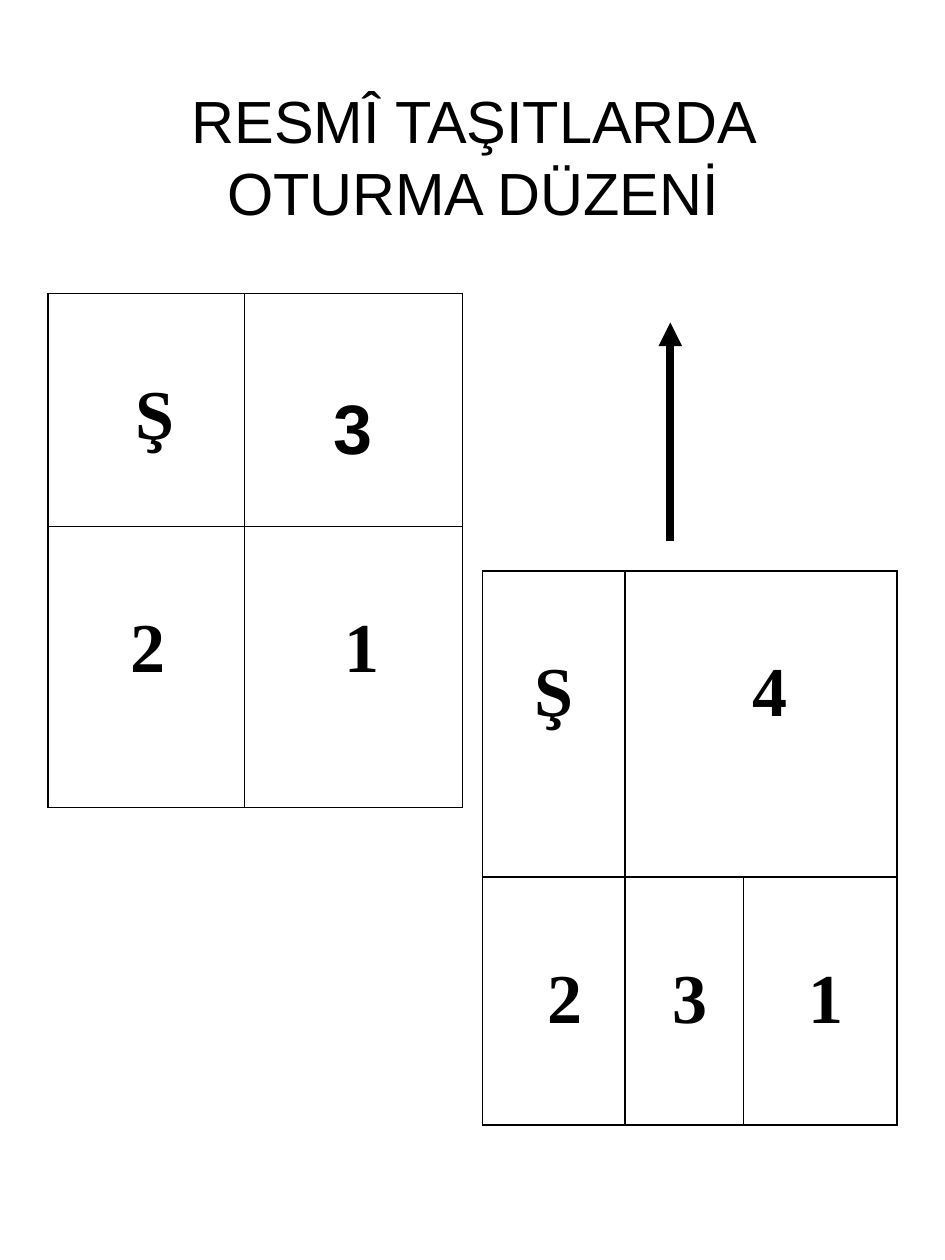
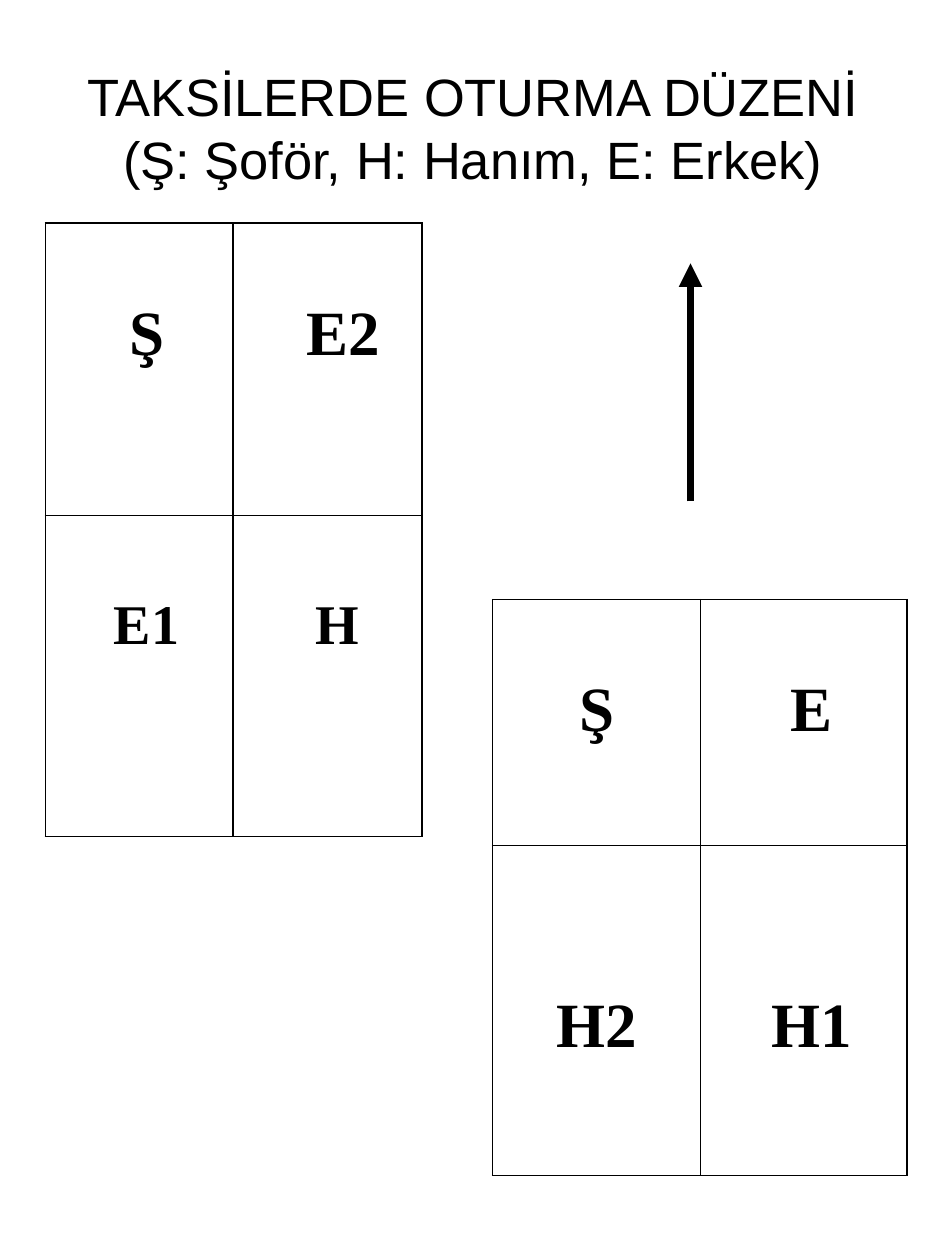
import pptx
import pptx.util
import pptx.dml.color
import pptx.enum.shapes
import pptx.enum.text
import pptx.oxml
import pptx.oxml.ns
from dataclasses import dataclass

Inches, Pt = pptx.util.Inches, pptx.util.Pt
ALIGN = pptx.enum.text.PP_ALIGN
BLACK = pptx.dml.color.RGBColor(0, 0, 0)
WHITE = pptx.dml.color.RGBColor(255, 255, 255)
SANS, SERIF = "Arial", "Times New Roman"
INSET_X, INSET_Y = 0.1, 0.05
LINE_HEIGHT, SPACE_WIDTH = 1.107, 0.25  # in ems
A_NS = pptx.oxml.ns.nsdecls("a")


@dataclass
class Seat:
    text: str
    size: int = 40
    indent: int = 0         # in space widths
    centred: bool = True
    lines_above: int = 1
    gap: float = 0          # extra inches above
    font: str = SERIF


def add_run(p, text, size, font, bold=False):
    r = p.add_run()
    r.text = text
    r.font.size = Pt(size)
    r.font.name = font
    r.font.bold = bold
    r.font.color.rgb = BLACK


def add_slide(prs):
    s = prs.slides.add_slide(prs.slide_layouts[6])
    s.background.fill.solid()
    s.background.fill.fore_color.rgb = WHITE
    return s


def add_title(s, lines, size, bottom=INSET_Y):
    sp = s.shapes.add_textbox(Inches(0.38), Inches(0.4), Inches(6.75), Inches(1.67))
    tf = sp.text_frame
    tf.word_wrap = True
    tf.vertical_anchor = pptx.enum.text.MSO_ANCHOR.MIDDLE
    tf.margin_bottom = Inches(bottom)
    p = tf.paragraphs[0]
    p.alignment = ALIGN.CENTER
    for i, line in enumerate(lines):
        if i:
            p.add_line_break()
        add_run(p, line, size, SANS)


def style_cell(cell):
    cell.fill.background()
    tc_pr = cell._tc.get_or_add_tcPr()
    for i, side in enumerate("LRTB"):
        tc_pr.insert(i, pptx.oxml.parse_xml(
            f'<a:ln{side} {A_NS} w="12700"><a:solidFill><a:srgbClr val="{BLACK}"/>'
            f'</a:solidFill></a:ln{side}>'))


def fill_seat(cell, seat):
    em = seat.size / 72
    cell.margin_left = Inches(INSET_X + seat.indent * SPACE_WIDTH * em)
    cell.margin_right = Inches(INSET_X)
    cell.margin_top = Inches(INSET_Y + seat.lines_above * LINE_HEIGHT * em + seat.gap)
    cell.margin_bottom = Inches(INSET_Y)
    p = cell.text_frame.paragraphs[0]
    p.alignment = ALIGN.CENTER if seat.centred else ALIGN.LEFT
    add_run(p, seat.text, seat.size, seat.font, bold=True)


def add_car(s, left, top, cols, rows, seats):
    """Draw a seating plan; None widens the seat on its left."""
    table = s.shapes.add_table(len(rows), len(cols), Inches(left), Inches(top),
                               Inches(sum(cols)), Inches(sum(rows))).table
    table.first_row = table.horz_banding = False
    for col, width in zip(table.columns, cols):
        col.width = Inches(width)
    for row, height in zip(table.rows, rows):
        row.height = Inches(height)
    for i, seat_row in enumerate(seats):
        for j, seat in enumerate(seat_row):
            cell = table.cell(i, j)
            style_cell(cell)
            if seat is None:
                table.cell(i, j - 1).merge(cell)
            else:
                fill_seat(cell, seat)


def add_direction_arrow(s, x, bottom, top):
    line = s.shapes.add_connector(pptx.enum.shapes.MSO_CONNECTOR.STRAIGHT,
                                  Inches(x), Inches(bottom), Inches(x), Inches(top))
    line.line.color.rgb = BLACK
    line.line.width = Pt(4.5)
    line.line._get_or_add_ln().append(
        pptx.oxml.parse_xml(f'<a:tailEnd {A_NS} type="triangle"/>'))
    line._element.spPr.append(pptx.oxml.parse_xml(f'<a:effectLst {A_NS}/>'))


def main():
    prs = pptx.Presentation()
    prs.slide_width, prs.slide_height = Inches(7.5), Inches(10)

    # Official vehicles
    s = add_slide(prs)
    add_title(s, ["RESMÎ TAŞITLARDA OTURMA DÜZENİ"], 34)
    add_car(s, 0.38, 2.33, [1.56, 1.73], [1.85, 2.23], [
        [Seat("Ş", indent=1), Seat("3", gap=0.11, font=SANS)],
        [Seat("2", indent=4, centred=False), Seat("1", indent=5, centred=False)]])
    add_car(s, 3.83, 4.53, [1.13, 0.94, 1.22], [2.43, 1.97], [
        [Seat("Ş"), Seat("4", indent=1), None],
        [Seat("2", indent=3, centred=False), Seat("3", indent=2, centred=False),
         Seat("1", indent=3, centred=False)]])
    add_direction_arrow(s, 5.32, 4.29, 2.56)

    # Taxis
    s = add_slide(prs)
    add_title(s, ["TAKSİLERDE OTURMA DÜZENİ", "(Ş: Şoför, H: Hanım, E: Erkek)"], 30,
              bottom=0.51)
    add_car(s, 0.36, 1.77, [1.49, 1.5], [2.32, 2.55], [
        [Seat("Ş", 36, indent=1), Seat("E2", 36, indent=2)],
        [Seat("E1", 32, indent=4, centred=False, gap=0.09),
         Seat("H", 32, indent=5, centred=False, gap=0.09)]])
    add_car(s, 3.91, 4.76, [1.65, 1.64], [1.95, 2.62], [
        [Seat("Ş", 36), Seat("E", 36, indent=1)],
        [Seat("H2", 36, lines_above=2), Seat("H1", 36, indent=1, lines_above=2)]])
    add_direction_arrow(s, 5.48, 3.98, 2.09)

    prs.save("out.pptx")


if __name__ == "__main__":
    main()
